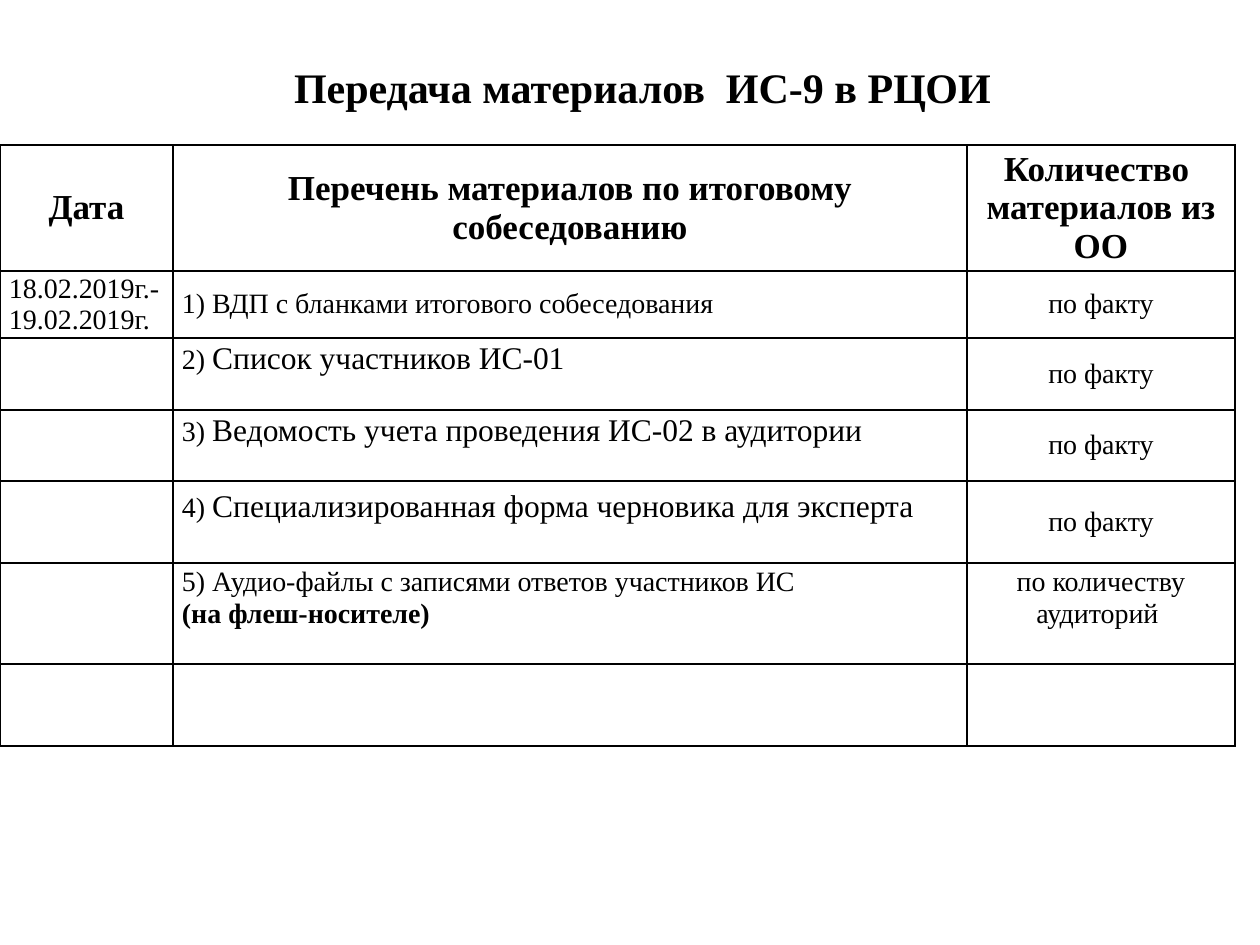
from lxml import etree
from pptx import Presentation
from pptx.dml.color import RGBColor
from pptx.enum.text import MSO_ANCHOR, MSO_AUTO_SIZE, PP_ALIGN
from pptx.oxml.ns import qn
from pptx.util import Emu, Pt

BLACK = RGBColor(0, 0, 0)
FONT = "Times New Roman"
LEFT, CENTER, JUSTIFY = PP_ALIGN.LEFT, PP_ALIGN.CENTER, PP_ALIGN.JUSTIFY
TOP, MIDDLE = MSO_ANCHOR.TOP, MSO_ANCHOR.MIDDLE
TITLE_ONLY = 5

COLUMN_WIDTHS = [173, 794, 268]
ROW_HEIGHTS = [126, 67, 72, 71, 82, 101, 82]
HEADERS = ["Дата", "Перечень материалов по итоговому собеседованию",
           "Количество  материалов из ОО"]
# Number, document name, top inset
DOCUMENTS = [("2) ", "Список участников ИС-01", 3),
             ("3) ", "Ведомость учета проведения ИС-02 в аудитории", 3),
             ("4) ", "Специализированная форма черновика для эксперта", 8)]
BY_FACT = "по факту"


def px(length):
    return Emu(round(length * 914400 / 126))


class SlideBuilder:
    def __init__(self, presentation):
        self.slide = presentation.slides.add_slide(presentation.slide_layouts[TITLE_ONLY])

    def style_run(self, run, size, bold=False):
        run.font.name = FONT
        run.font.size = Pt(size)
        run.font.bold = bold
        run.font.color.rgb = BLACK

    def title(self, text, left, top, width, height, size):
        shape = self.slide.shapes.title
        shape.left, shape.top, shape.width, shape.height = map(px, (left, top, width, height))
        frame = shape.text_frame
        frame.text = text
        frame.word_wrap = True
        frame.auto_size = MSO_AUTO_SIZE.NONE
        frame.vertical_anchor = TOP
        paragraph = frame.paragraphs[0]
        paragraph.alignment = CENTER
        self.style_run(paragraph.runs[0], size, bold=True)

    def table(self, left, top, column_widths, row_heights):
        frame = self.slide.shapes.add_table(
            len(row_heights), len(column_widths), px(left), px(top),
            px(sum(column_widths)), px(sum(row_heights)))
        table = frame.table
        table.first_row = table.horz_banding = False
        for column, width in zip(table.columns, column_widths):
            column.width = px(width)
        for row, height in zip(table.rows, row_heights):
            row.height = px(height)
        for cell in table.iter_cells():
            cell.fill.background()
            self.border(cell)
        return table

    def border(self, cell, width=1):
        properties = cell._tc.get_or_add_tcPr()
        for position, side in enumerate(("a:lnL", "a:lnR", "a:lnT", "a:lnB")):
            line = etree.Element(qn(side), w=str(Pt(width)))
            fill = etree.SubElement(line, qn("a:solidFill"))
            etree.SubElement(fill, qn("a:srgbClr"), val=str(BLACK))
            properties.insert(position, line)

    def cell(self, cell, paragraphs, alignment=LEFT, anchor=MIDDLE, side=9, top=0):
        """Each paragraph is a list of (text, size, bold) runs."""
        cell.vertical_anchor = anchor
        cell.margin_left = cell.margin_right = px(side)
        cell.margin_top, cell.margin_bottom = px(top), 0
        frame = cell.text_frame
        for index, runs in enumerate(paragraphs):
            paragraph = frame.add_paragraph() if index else frame.paragraphs[0]
            paragraph.alignment = alignment
            for text, size, bold in runs:
                run = paragraph.add_run()
                run.text = text
                self.style_run(run, size, bold)


def main():
    presentation = Presentation()
    presentation.slide_width, presentation.slide_height = px(1260), px(945)
    builder = SlideBuilder(presentation)

    builder.title("Передача материалов  ИС-9 в РЦОИ", 25, 55, 1235, 117, 24)
    table = builder.table(0, 145, COLUMN_WIDTHS, ROW_HEIGHTS)

    # Header row
    for column, text in enumerate(HEADERS):
        builder.cell(table.cell(0, column), [[(text, 20, True)]], CENTER, side=6)

    # Dated row
    builder.cell(table.cell(1, 0), [[("18.02.2019г.-19.02.2019г. ", 16, False)]], JUSTIFY)
    builder.cell(table.cell(1, 1), [[("1) ВДП с бланками итогового собеседования", 16, False)]])
    builder.cell(table.cell(1, 2), [[(BY_FACT, 16, False)]], CENTER)

    # Numbered documents
    for row, (number, name, inset) in enumerate(DOCUMENTS, start=2):
        builder.cell(table.cell(row, 1), [[(number, 16, False), (name, 18, False)]],
                     anchor=TOP, top=inset)
        builder.cell(table.cell(row, 2), [[(BY_FACT, 16, False)]], CENTER)

    # Audio files
    builder.cell(table.cell(5, 1),
                 [[("5) Аудио-файлы с записями ответов участников ИС", 16, False)],
                  [("(на флеш-носителе)", 16, True)]], anchor=TOP, top=4)
    builder.cell(table.cell(5, 2), [[("по количеству аудиторий ", 16, False)]],
                 CENTER, TOP, top=4)

    presentation.save("out.pptx")


if __name__ == "__main__":
    main()
